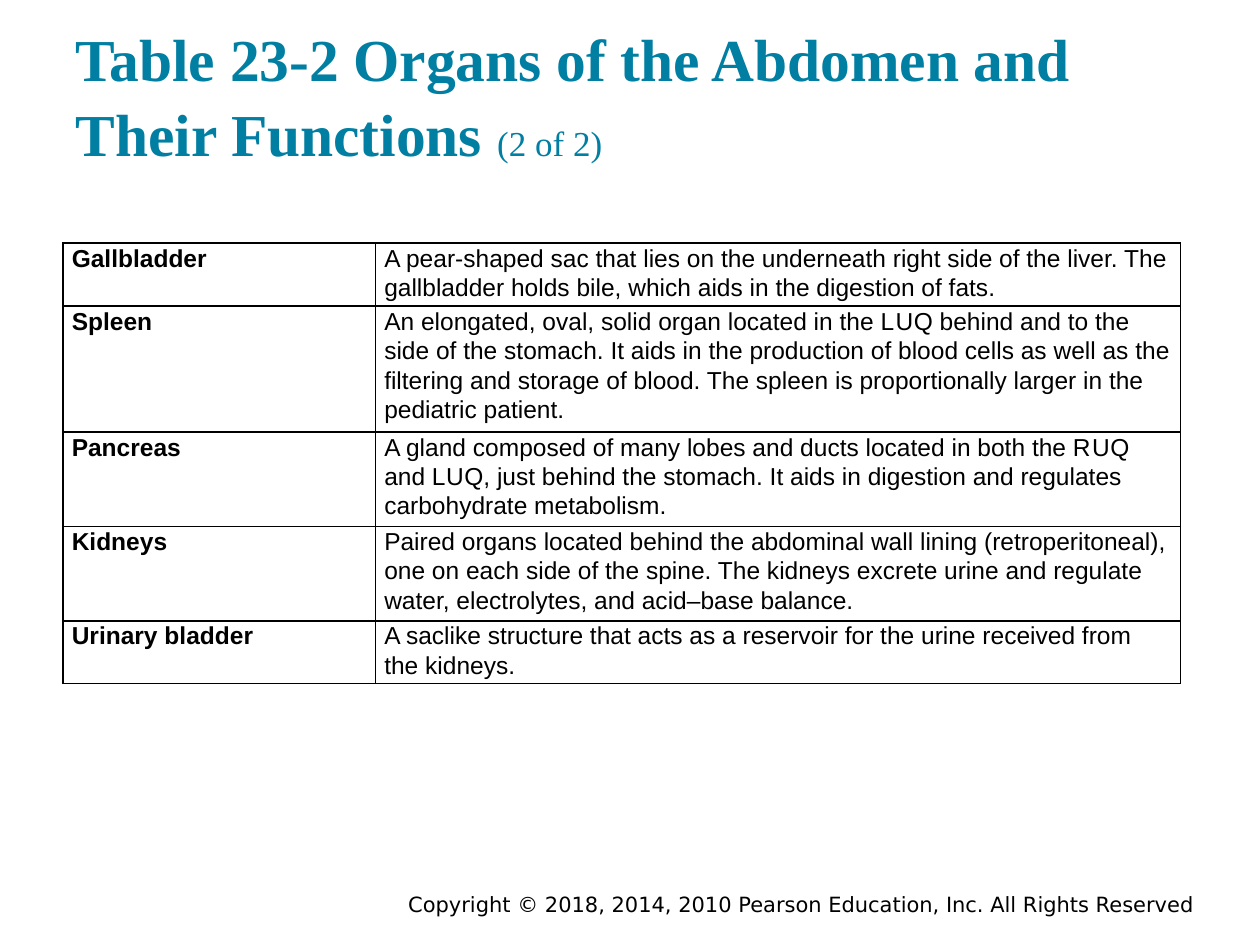
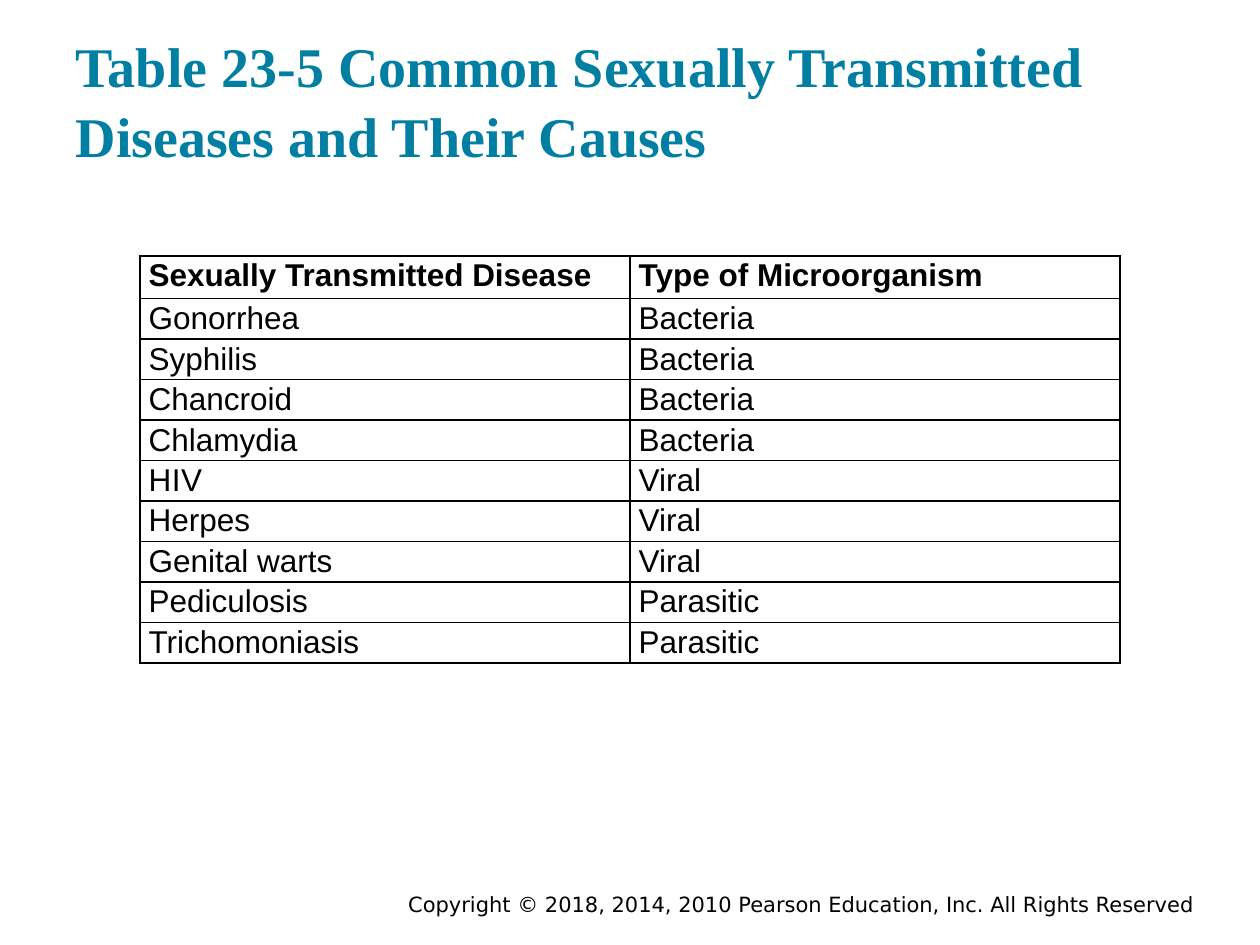
import pptx
import pptx.dml.color
import pptx.enum.text
import pptx.oxml
import pptx.oxml.ns
import pptx.util

Inches = pptx.util.Inches
Pt = pptx.util.Pt
PP_ALIGN = pptx.enum.text.PP_ALIGN
MSO_ANCHOR = pptx.enum.text.MSO_ANCHOR
MSO_AUTO_SIZE = pptx.enum.text.MSO_AUTO_SIZE

COLORS = {"title": "007FA3", "text": "000000", "line": "000000", "cell": "FFFFFF"}
FONTS = {"title": "Times New Roman", "table": "Arial", "footer": "DejaVu Sans"}
COPYRIGHT = "Copyright © 2018, 2014, 2010 Pearson Education, Inc. All Rights Reserved"
THIN_SPACE = "|"

TITLE_FRAME = {
    "word_wrap": True, "auto_size": MSO_AUTO_SIZE.NONE, "vertical_anchor": MSO_ANCHOR.BOTTOM,
    "margin_left": Inches(0.1), "margin_right": Inches(0.1),
    "margin_top": Inches(0.1), "margin_bottom": Inches(0.1),
}
FOOTER_FRAME = {
    "word_wrap": True, "vertical_anchor": MSO_ANCHOR.MIDDLE,
    "margin_top": 0, "margin_bottom": 0,
}
CELL_FRAME = {
    "vertical_anchor": MSO_ANCHOR.TOP,
    "margin_left": Inches(0.07), "margin_right": Inches(0.07),
    "margin_top": 0, "margin_bottom": 0,
}

ORGANS = [
    ("Gallbladder",
     "A pear-shaped sac that lies on the underneath right side of the liver. "
     "The gallbladder holds bile, which aids in the digestion of fats."),
    ("Spleen",
     "An elongated, oval, solid organ located in the L|U|Q behind and to the side of "
     "the stomach. It aids in the production of blood cells as well as the filtering "
     "and storage of blood. The spleen is proportionally larger in the pediatric patient."),
    ("Pancreas",
     "A gland composed of many lobes and ducts located in both the R|U|Q and L|U|Q, "
     "just behind the stomach. It aids in digestion and regulates carbohydrate metabolism."),
    ("Kidneys",
     "Paired organs located behind the abdominal wall lining (retroperitoneal), one on "
     "each side of the spine. The kidneys excrete urine and regulate water, "
     "electrolytes, and acid–base balance."),
    ("Urinary bladder",
     "A saclike structure that acts as a reservoir for the urine received from the kidneys."),
]
DISEASES = {
    "Bacteria": ["Gonorrhea", "Syphilis", "Chancroid", "Chlamydia"],
    "Viral": ["H|I|V", "Herpes", "Genital warts"],
    "Parasitic": ["Pediculosis", "Trichomoniasis"],
}


def apply(obj, values):
    for name, value in values.items():
        setattr(obj, name, value)


def add_run(p, text, font, size, color, bold=False):
    r = p.add_run()
    r.text = text
    apply(r.font, {"name": FONTS[font], "size": Pt(size), "bold": bold})
    r.font.color.rgb = pptx.dml.color.RGBColor.from_string(COLORS[color])


def add_title(slide, text, size, part=None):
    sp = slide.shapes.title
    apply(sp, {"left": Inches(0.5), "top": Inches(0.24),
               "width": Inches(9), "height": Inches(1.2)})
    tf = sp.text_frame
    apply(tf, TITLE_FRAME)
    p = tf.paragraphs[0]
    apply(p, {"alignment": PP_ALIGN.LEFT, "line_spacing": 1.05})
    add_run(p, text, "title", size, "title", True)
    if part:
        add_run(p, part, "title", 20, "title")


def add_footer(slide):
    sp = slide.shapes.add_textbox(Inches(2.92), Inches(7.05), Inches(6.66), Inches(0.25))
    tf = sp.text_frame
    apply(tf, FOOTER_FRAME)
    p = tf.paragraphs[0]
    p.alignment = PP_ALIGN.RIGHT
    add_run(p, COPYRIGHT, "footer", 12, "text")


def add_borders(cell):
    tc_pr = cell._tc.get_or_add_tcPr()
    for i, side in enumerate(("lnL", "lnR", "lnT", "lnB")):
        tc_pr.insert(i, pptx.oxml.parse_xml(
            f'<a:{side} {pptx.oxml.ns.nsdecls("a")} w="{Pt(1)}"><a:solidFill>'
            f'<a:srgbClr val="{COLORS["line"]}"/></a:solidFill></a:{side}>'))


def fill_cell(cell, text, size, bold):
    apply(cell, CELL_FRAME)
    cell.fill.solid()
    cell.fill.fore_color.rgb = pptx.dml.color.RGBColor.from_string(COLORS["cell"])
    add_borders(cell)
    p = cell.text_frame.paragraphs[0]
    p.line_spacing = 1.07
    for i, piece in enumerate(text.split(THIN_SPACE)):
        if i:
            add_run(p, " ", "table", 1, "text", bold)
        add_run(p, piece, "table", size, "text", bold)


def add_table(slide, left, top, widths, heights, rows, size, header_row):
    table = slide.shapes.add_table(
        len(rows), len(widths), Inches(left), Inches(top),
        Inches(sum(widths)), Inches(sum(heights))).table
    apply(table, {"first_row": header_row, "first_col": not header_row, "horz_banding": False})
    for column, width in zip(table.columns, widths):
        column.width = Inches(width)
    for i, (row, height) in enumerate(zip(rows, heights)):
        table.rows[i].height = Inches(height)
        for j, text in enumerate(row):
            fill_cell(table.cell(i, j), text, size, (i if header_row else j) == 0)


def add_slide(prs, title, size, part=None):
    slide = prs.slides.add_slide(prs.slide_layouts[5])
    add_footer(slide)
    add_title(slide, title, size, part)
    return slide


def main():
    prs = pptx.Presentation()
    apply(prs, {"slide_width": Inches(10), "slide_height": Inches(7.5)})

    slide = add_slide(prs, "Table 23-2 Organs of the Abdomen and Their Functions ", 34, "(2 of 2)")
    add_table(slide, 0.5, 1.93, [2.48, 6.39], [0.47, 0.56, 0.47, 0.63, 0.31],
              ORGANS, 14, header_row=False)

    slide = add_slide(prs, "Table 23-5 Common Sexually Transmitted Diseases and Their Causes", 32)
    rows = [("Sexually Transmitted Disease", "Type of Microorganism")]
    rows += [(name, cause) for cause, names in DISEASES.items() for name in names]
    add_table(slide, 1.11, 2.03, [3.89] * 2, [0.34] + [0.32] * (len(rows) - 1),
              rows, 18, header_row=True)

    prs.save("out.pptx")


if __name__ == "__main__":
    main()
